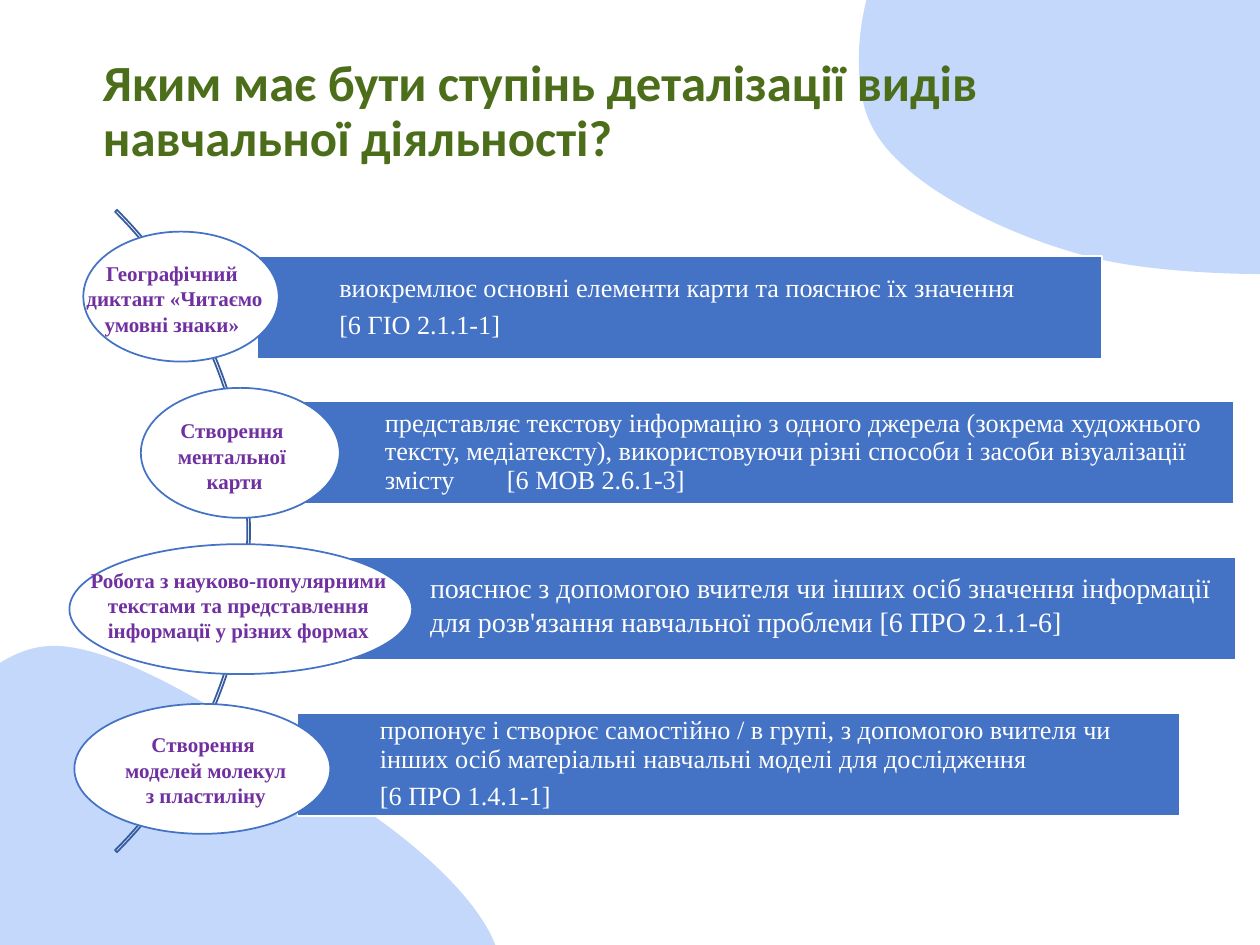
"""Build the slide on how detailed the kinds of learning activity should be."""
from dataclasses import dataclass
from typing import Any

from lxml import etree
from pptx import Presentation
from pptx import util as u
from pptx.dml import color
from pptx.enum import shapes, text
from pptx.oxml import ns

BLUE, PALE, WHITE = "4472C4", "C4D8FB", "FFFFFF"
PURPLE, GREEN, ARC = "7030A0", "4C6E1B", "365B9D"
SERIF = "Times New Roman"
BAR_HEIGHT, OVAL_HEIGHT, LABEL_HEIGHT = 2.08, 2.62, 1.78

Point = tuple[float, float]


@dataclass
class Box:
    left: float
    top: float
    width: float
    height: float

    def lengths(self) -> list[int]:
        return [u.Cm(value) for value in (self.left, self.top, self.width, self.height)]


@dataclass
class Style:
    name: str
    size: float
    color: str
    bold: bool = False
    alignment: Any = text.PP_ALIGN.LEFT
    line_spacing: float = 1.0
    space_after: float = 0


@dataclass
class Activity:
    bar: Box
    oval: Box
    label: Box
    title: list[str]
    outcome: list[str]
    outcome_box: Box | None = None


TITLE_STYLE = Style("Calibri", 29, GREEN, bold=True, line_spacing=0.9)
LABEL_STYLE = Style(SERIF, 12, PURPLE, bold=True, alignment=text.PP_ALIGN.CENTER)
BAR_STYLE = Style(SERIF, 15, WHITE, line_spacing=0.9, space_after=5.25)
NOTE_STYLE = Style(SERIF, 16, WHITE)

BLOBS: list[list[Point]] = [
    [(18.64, -1.8), (19.84, -2.31), (23.16, -1.45), (24.71, -0.61), (26.26, 0.23), (27.41, 2.29),
     (27.99, 3.28), (28.58, 4.27), (29.24, 4.98), (28.22, 5.28), (27.23, 5.61), (23.75, 5.64),
     (21.97, 5.18), (20.19, 4.72), (18.08, 3.66), (17.55, 2.49), (16.99, 1.35), (17.45, -1.27),
     (18.64, -1.8)],
    [(0.91, 13.03), (2.59, 12.85), (6.07, 15.42), (7.62, 16.51), (9.14, 17.6), (10.08, 18.75),
     (10.08, 19.51), (10.11, 20.24), (9.07, 20.9), (7.7, 21.01), (6.35, 21.11), (3.66, 20.75),
     (1.96, 20.17), (0.25, 19.58), (-2.29, 18.67), (-2.46, 17.48), (-2.64, 16.28), (-0.79, 13.18),
     (0.91, 13.03)],
]

ACTIVITIES = [
    Activity(
        Box(5.18, 5.16, 17.04, BAR_HEIGHT), Box(1.68, 4.67, 3.94, OVAL_HEIGHT),
        Box(1.42, 5.13, 4.2, LABEL_HEIGHT),
        ["Географічний ", "диктант «Читаємо умовні знаки» "],
        ["виокремлює основні елементи карти та пояснює їх значення", "[6 ГІО 2.1.1-1]"]),
    Activity(
        Box(6.1, 8.08, 18.77, BAR_HEIGHT), Box(2.84, 7.82, 4.01, OVAL_HEIGHT),
        Box(3.28, 8.3, 2.9, LABEL_HEIGHT),
        ["Створення ", "ментальної ", "карти"],
        ["представляє текстову інформацію з одного джерела (зокрема художнього тексту, медіатексту), "
         "використовуючи різні способи і засоби візуалізації змісту\t[6 МОВ 2.6.1-3]"]),
    Activity(
        Box(6.07, 11.23, 18.85, BAR_HEIGHT), Box(1.4, 10.97, 6.91, OVAL_HEIGHT),
        Box(1.52, 11.31, 6.58, LABEL_HEIGHT),
        ["Робота з науково-популярними текстами та представлення інформації у різних формах"],
        ["пояснює з допомогою вчителя чи інших осіб значення інформації "
         "для розв'язання навчальної проблеми [6 ПРО 2.1.1-6]"],
        Box(8.42, 11.38, 16.4, 1.6)),
    Activity(
        Box(6, 14.37, 17.78, BAR_HEIGHT), Box(1.5, 14.19, 5.16, OVAL_HEIGHT),
        Box(2.18, 14.63, 3.94, LABEL_HEIGHT),
        ["Створення ", "моделей молекул з пластиліну"],
        ["пропонує і створює самостійно / в групі, з допомогою вчителя чи інших осіб "
         "матеріальні навчальні моделі для дослідження", "[6 ПРО 1.4.1-1]"]),
]


def rgb(value: str) -> color.RGBColor:
    return color.RGBColor.from_string(value)


def apply(target: Any, values: dict[str, Any]) -> None:
    for name, value in values.items():
        setattr(target, name, value)


def paint(shape: Any, fill: str | None, line: str | None) -> None:
    shape.shadow.inherit = False
    for part, value in ((shape.fill, fill), (shape.line.fill, line)):
        if value is None:
            part.background()
        else:
            part.solid()
            part.fore_color.rgb = rgb(value)
    if line:
        shape.line.width = u.Pt(1)


def add_tab_stop(paragraph: Any, position: float) -> None:
    stops = etree.SubElement(paragraph._p.get_or_add_pPr(), ns.qn("a:tabLst"))
    etree.SubElement(stops, ns.qn("a:tab"), pos=str(u.Cm(position)), algn="l")


def write(shape: Any, lines: list[str], style: Style, **frame_format: Any) -> None:
    frame = shape.text_frame
    apply(frame, {"word_wrap": True, "auto_size": text.MSO_AUTO_SIZE.NONE, **frame_format})
    for index, line in enumerate(lines):
        paragraph = frame.paragraphs[0] if index == 0 else frame.add_paragraph()
        if "\t" in line:
            add_tab_stop(paragraph, 2.46)
        apply(paragraph, {"alignment": style.alignment, "line_spacing": style.line_spacing,
                          "space_before": u.Pt(0), "space_after": u.Pt(style.space_after)})
        run = paragraph.add_run()
        run.text = line
        apply(run.font, {"name": style.name, "size": u.Pt(style.size), "bold": style.bold})
        run.font.color.rgb = rgb(style.color)


def add_shape(slide: Any, kind: Any, box: Box, fill: str | None, line: str) -> Any:
    shape = slide.shapes.add_shape(kind, *box.lengths())
    paint(shape, fill, line)
    return shape


def add_text(slide: Any, box: Box, lines: list[str], style: Style) -> None:
    write(slide.shapes.add_textbox(*box.lengths()), lines, style)


def add_blob(slide: Any, points: list[Point]) -> None:
    """Draw a closed outline whose straight segments become cubic curves."""
    outline = [(u.Cm(x), u.Cm(y)) for x, y in points]
    builder = slide.shapes.build_freeform(*outline[0])
    builder.add_line_segments(outline[3::3], close=True)
    shape = builder.convert_to_shape()
    segments = list(shape._element.iter(ns.qn("a:lnTo")))
    for index, segment in enumerate(segments):
        curve = etree.Element(ns.qn("a:cubicBezTo"))
        for x, y in outline[3 * index + 1:3 * index + 4]:
            etree.SubElement(curve, ns.qn("a:pt"), x=str(x - shape.left), y=str(y - shape.top))
        segment.getparent().replace(segment, curve)
    paint(shape, PALE, None)


def add_title(slide: Any, box: Box, title: str) -> None:
    shape = slide.shapes.title
    slide.shapes._spTree.append(shape._element)
    apply(shape, dict(zip(("left", "top", "width", "height"), box.lengths())))
    write(shape, [title], TITLE_STYLE, vertical_anchor=text.MSO_ANCHOR.MIDDLE)


def add_activity(slide: Any, activity: Activity) -> None:
    bar = add_shape(slide, shapes.MSO_SHAPE.RECTANGLE, activity.bar, BLUE, WHITE)
    if activity.outcome_box is None:
        margins = {f"margin_{side}": u.Cm(0.1) for side in ("top", "right", "bottom")}
        write(bar, activity.outcome, BAR_STYLE, margin_left=u.Cm(1.66),
              vertical_anchor=text.MSO_ANCHOR.MIDDLE, **margins)
    add_shape(slide, shapes.MSO_SHAPE.OVAL, activity.oval, WHITE, BLUE)
    if activity.outcome_box:
        add_text(slide, activity.outcome_box, activity.outcome, NOTE_STYLE)
    add_text(slide, activity.label, activity.title, LABEL_STYLE)


def main() -> None:
    presentation = Presentation()
    apply(presentation, {"slide_width": u.Cm(25.4), "slide_height": u.Cm(19.05)})
    slide = presentation.slides.add_slide(presentation.slide_layouts[5])
    for points in BLOBS:
        add_blob(slide, points)
    add_title(slide, Box(1.82, 0.82, 22.5, 2.9),
              "Яким має бути ступінь деталізації видів навчальної діяльності?")
    arc = add_shape(slide, shapes.MSO_SHAPE.BLOCK_ARC, Box(-13.27, 1.55, 18.31, 18.31), None, ARC)
    for index, value in enumerate((189, 27, 0.003)):
        arc.adjustments[index] = value
    for activity in ACTIVITIES:
        add_activity(slide, activity)
    presentation.save("out.pptx")


if __name__ == "__main__":
    main()
